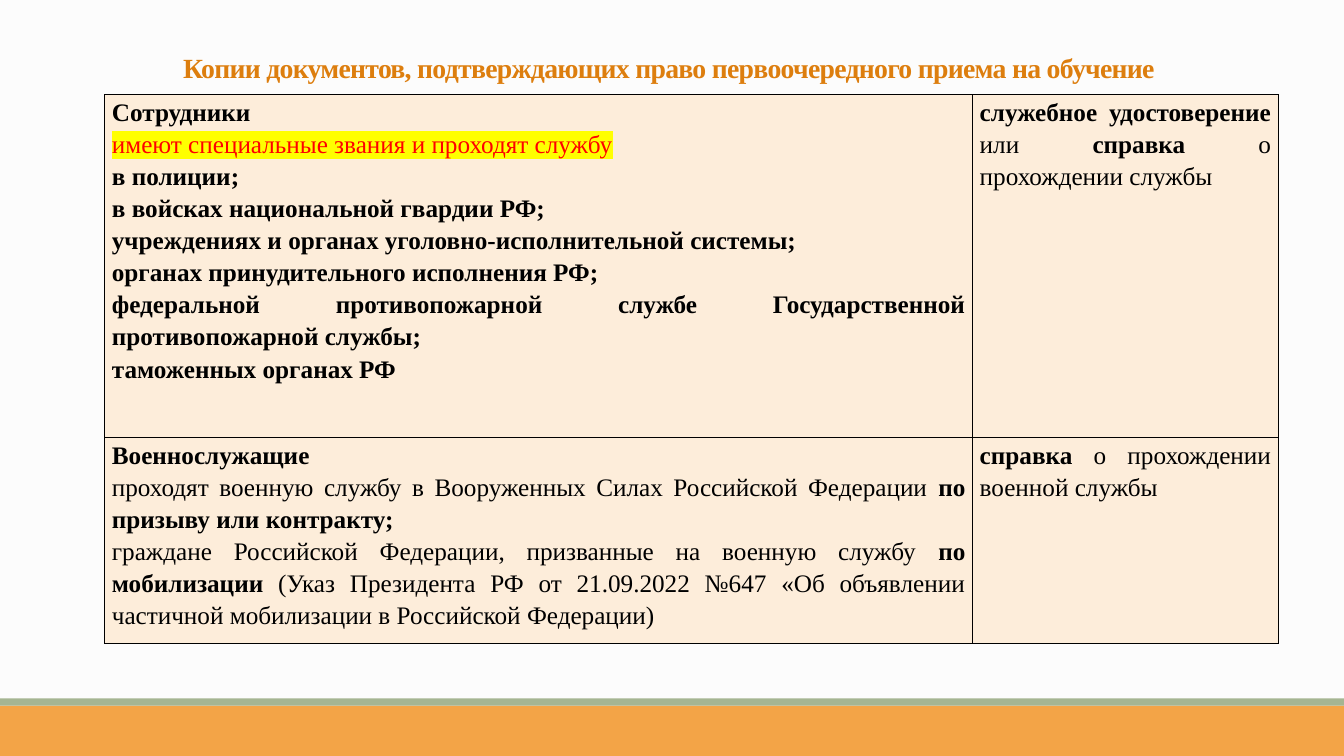
from lxml import etree
from pptx import Presentation
from pptx import util as u
from pptx.dml.color import RGBColor
from pptx.enum import shapes, text
from pptx.oxml import ns

COLORS = {
    "background": "FCFCFC",
    "orange": "F3A447",
    "green": "A5B592",
    "title": "DD7E0E",
    "cell": "FDEDDA",
    "black": "000000",
    "red": "FF0000",
    "yellow": "FFFF00",
}
FONT = "Times New Roman"
LINE_SPACING = 1.15
TITLE = "Копии документов, подтверждающих право первоочередного приема на обучение "

STAFF = [
    [("Сотрудники", "bold")],
    [("имеют специальные звания и проходят службу", "marked")],
    [("в полиции;", "bold")],
    [("в войсках национальной гвардии РФ;", "bold")],
    [("учреждениях и органах уголовно-исполнительной системы;", "bold")],
    [("органах принудительного исполнения РФ;", "bold")],
    [("федеральной противопожарной службе Государственной "
      "противопожарной службы;", "bold")],
    [("таможенных органах РФ", "bold")],
]
STAFF_PROOF = [
    [("служебное удостоверение ", "bold"), ("или ", "plain"),
     ("справка", "bold"), (" о прохождении службы", "plain")],
]
MILITARY = [
    [("Военнослужащие", "bold")],
    [("проходят военную службу в Вооруженных Силах Российской Федерации ", "plain"),
     ("по призыву или контракту;", "bold")],
    [("граждане Российской Федерации, призванные на военную службу ", "plain"),
     ("по мобилизации", "bold"),
     (" (Указ Президента РФ от 21.09.2022 №647 «Об объявлении "
      "частичной мобилизации в Российской Федерации)", "plain")],
]
MILITARY_PROOF = [
    [("справка ", "bold"), ("о прохождении военной службы", "plain")],
]
ROWS = [(STAFF, STAFF_PROOF), (MILITARY, MILITARY_PROOF)]
COLUMN_WIDTHS = [21.87, 7.7]
ROW_HEIGHTS = [8.64, 5.18]


def color(name):
    """Return the named colour."""
    return RGBColor.from_string(COLORS[name])


def format_run(run, size, color_name, bold):
    """Set the font of a run."""
    run.font.size = u.Pt(size)
    run.font.name = FONT
    run.font.bold = bold
    run.font.color.rgb = color(color_name)


def highlight(run, color_name):
    """Put a marker colour behind a run."""
    mark = etree.Element(ns.qn("a:highlight"))
    etree.SubElement(mark, ns.qn("a:srgbClr"), val=COLORS[color_name])
    run.font._element.find(ns.qn("a:solidFill")).addnext(mark)


def add_border(cell):
    """Draw a thin black line on all four sides of a cell."""
    properties = cell._tc.get_or_add_tcPr()
    for index, side in enumerate(("lnL", "lnR", "lnT", "lnB")):
        line = etree.Element(ns.qn(f"a:{side}"), w=str(u.Pt(1)))
        fill = etree.SubElement(line, ns.qn("a:solidFill"))
        etree.SubElement(fill, ns.qn("a:srgbClr"), val=COLORS["black"])
        properties.insert(index, line)


def fill_cell(cell, paragraphs):
    """Write justified paragraphs into a cell and colour it."""
    cell.margin_left = cell.margin_right = u.Cm(0.18)
    cell.margin_top = cell.margin_bottom = 0
    cell.fill.solid()
    cell.fill.fore_color.rgb = color("cell")
    add_border(cell)
    frame = cell.text_frame
    frame.text = "\n".join("" for _ in paragraphs)
    for paragraph, pieces in zip(frame.paragraphs, paragraphs):
        paragraph.alignment = text.PP_ALIGN.JUSTIFY
        paragraph.line_spacing = LINE_SPACING
        for words, style in pieces:
            run = paragraph.add_run()
            run.text = words
            marked = style == "marked"
            format_run(run, 18, "red" if marked else "black", style == "bold")
            if marked:
                highlight(run, "yellow")


def add_footer(slide, left, top, width, height):
    """Draw the green strip above the orange band."""
    strip = 0.18
    bands = [("orange", top + strip, height - strip), ("green", top, strip)]
    for name, band_top, band_height in bands:
        shape = slide.shapes.add_shape(
            shapes.MSO_SHAPE.RECTANGLE,
            u.Cm(left), u.Cm(band_top), u.Cm(width), u.Cm(band_height))
        shape.shadow.inherit = False
        shape.fill.solid()
        shape.fill.fore_color.rgb = color(name)
        shape.line.fill.background()


def add_title(slide, left, top, width, height):
    """Place and format the title."""
    title = slide.shapes.title
    title.left, title.top = u.Cm(left), u.Cm(top)
    title.width, title.height = u.Cm(width), u.Cm(height)
    frame = title.text_frame
    frame.text = TITLE
    frame.word_wrap = True
    frame.auto_size = text.MSO_AUTO_SIZE.NONE
    frame.vertical_anchor = text.MSO_ANCHOR.BOTTOM
    paragraph = frame.paragraphs[0]
    paragraph.alignment = text.PP_ALIGN.CENTER
    paragraph.line_spacing = LINE_SPACING
    run = paragraph.runs[0]
    format_run(run, 19.8, "title", True)
    run.font._element.set("spc", "-50")


def add_documents_table(slide, left, top):
    """Build the table of applicants and the papers they show."""
    table = slide.shapes.add_table(
        len(ROW_HEIGHTS), len(COLUMN_WIDTHS), u.Cm(left), u.Cm(top),
        u.Cm(sum(COLUMN_WIDTHS)), u.Cm(sum(ROW_HEIGHTS))).table
    table.first_row = False
    table.horz_banding = False
    for column, width in zip(table.columns, COLUMN_WIDTHS):
        column.width = u.Cm(width)
    for row, height, contents in zip(table.rows, ROW_HEIGHTS, ROWS):
        row.height = u.Cm(height)
        for cell, paragraphs in zip(row.cells, contents):
            fill_cell(cell, paragraphs)


def main():
    """Build the slide and save it."""
    presentation = Presentation()
    presentation.slide_width = u.Cm(33.87)
    presentation.slide_height = u.Cm(19.05)
    slide = presentation.slides.add_slide(presentation.slide_layouts[5])
    slide.background.fill.solid()
    slide.background.fill.fore_color.rgb = color("background")
    add_footer(slide, 0, 17.6, 33.87, 1.45)
    add_title(slide, 3.4, 0.89, 27.05, 1.35)
    add_documents_table(slide, 2.64, 2.39)
    presentation.save("out.pptx")


if __name__ == "__main__":
    main()
